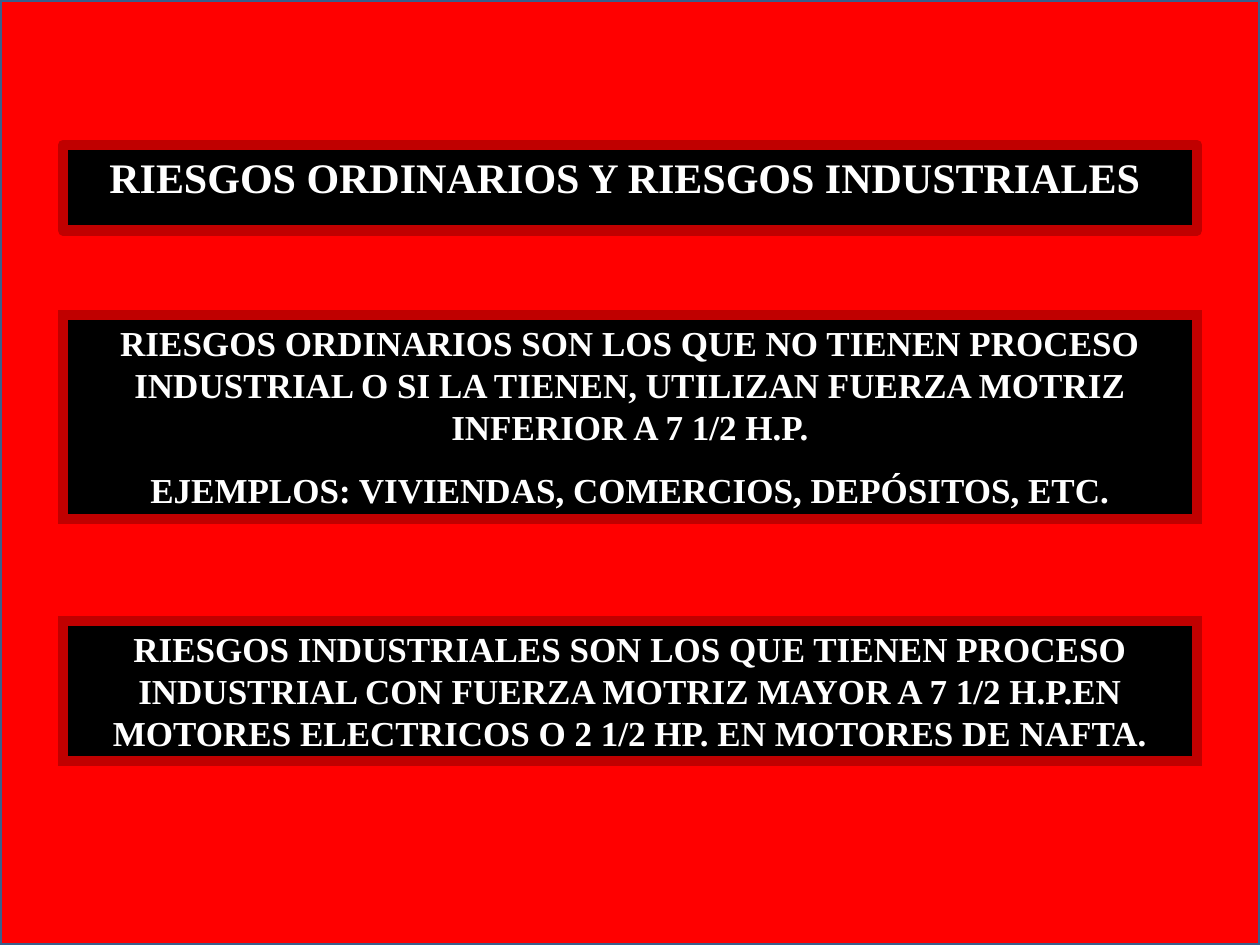
"""Build the slide on ordinary and industrial risks."""
from dataclasses import dataclass

from lxml.etree import SubElement
from pptx import Presentation
from pptx.dml.color import RGBColor as Rgb
from pptx.enum.shapes import MSO_SHAPE as Form
from pptx.enum.text import MSO_ANCHOR as Anchor, MSO_AUTO_SIZE as Fit, PP_ALIGN as Align
from pptx.oxml.ns import qn
from pptx.util import Inches, Pt

WIDE, HIGH = Inches(10), Inches(7.5)
SIDE = 0.05
INK = {"back": "FF0000", "edge": "3A5F8C", "panel": "000000", "frame": "C00000", "text": "FFFFFF"}


@dataclass
class Panel:
    top: float
    tall: float
    size: int
    lines: list[str]
    fit: Fit = Fit.SHAPE_TO_FIT_TEXT


HEAD = Panel(1.15 / 7.5, 0.68 / 7.5, 24, ["RIESGOS ORDINARIOS Y RIESGOS INDUSTRIALES "], Fit.NONE)
PANELS = [
    Panel(2.5 / 7.5, 1.62 / 7.5, 20, [
        "RIESGOS ORDINARIOS SON LOS QUE NO TIENEN PROCESO INDUSTRIAL O SI LA TIENEN, "
        "UTILIZAN FUERZA MOTRIZ INFERIOR A 7 1/2 H.P.",
        "EJEMPLOS: VIVIENDAS, COMERCIOS, DEPÓSITOS, ETC.",
    ]),
    Panel(4.93 / 7.5, 1.11 / 7.5, 20, [
        "RIESGOS INDUSTRIALES SON LOS QUE TIENEN PROCESO INDUSTRIAL CON FUERZA MOTRIZ "
        "MAYOR A 7 1/2 H.P.EN MOTORES ELECTRICOS O 2 1/2 HP. EN MOTORES DE NAFTA.",
    ]),
]


def paint(shape, fill: str, line: str, width: float) -> None:
    """Set the fill and outline of a shape."""
    shape.fill.solid()
    shape.fill.fore_color.rgb = Rgb.from_string(INK[fill])
    shape.line.color.rgb = Rgb.from_string(INK[line])
    shape.line.width = Pt(width)


def dress(shape, panel: Panel) -> None:
    """Place a text shape as a framed black panel."""
    shape.left, shape.width = int(WIDE * SIDE), int(WIDE * (1 - 2 * SIDE))
    shape.top, shape.height = int(HIGH * panel.top), int(HIGH * panel.tall)
    paint(shape, "panel", "frame", 6)
    frame = shape.text_frame
    frame.text = "\n".join(panel.lines)
    frame.word_wrap = True
    frame.auto_size = panel.fit
    frame.vertical_anchor = Anchor.TOP
    for rank, para in enumerate(frame.paragraphs):
        para.alignment = Align.CENTER
        para.space_before = Pt(12 if rank else 0)
        font = para.font
        font.name, font.size, font.bold = "Times New Roman", Pt(panel.size), True
        font.color.rgb = Rgb.from_string(INK["text"])


def main() -> None:
    """Draw the slide and save it."""
    deck = Presentation()
    deck.slide_width, deck.slide_height = WIDE, HIGH
    slide = deck.slides.add_slide(deck.slide_layouts[5])
    shapes = slide.shapes
    title = shapes.title
    back = shapes.add_shape(Form.RECTANGLE, 0, 0, WIDE, HIGH)
    back.shadow.inherit = False
    paint(back, "back", "edge", 2)
    title.element.addprevious(back.element)
    dress(title, HEAD)
    for panel in PANELS:
        box = shapes.add_textbox(0, 0, 0, 0)
        dress(box, panel)
        SubElement(box.line._get_or_add_ln(), qn("a:miter")).set("lim", "800000")
    deck.save("out.pptx")


if __name__ == "__main__":
    main()
